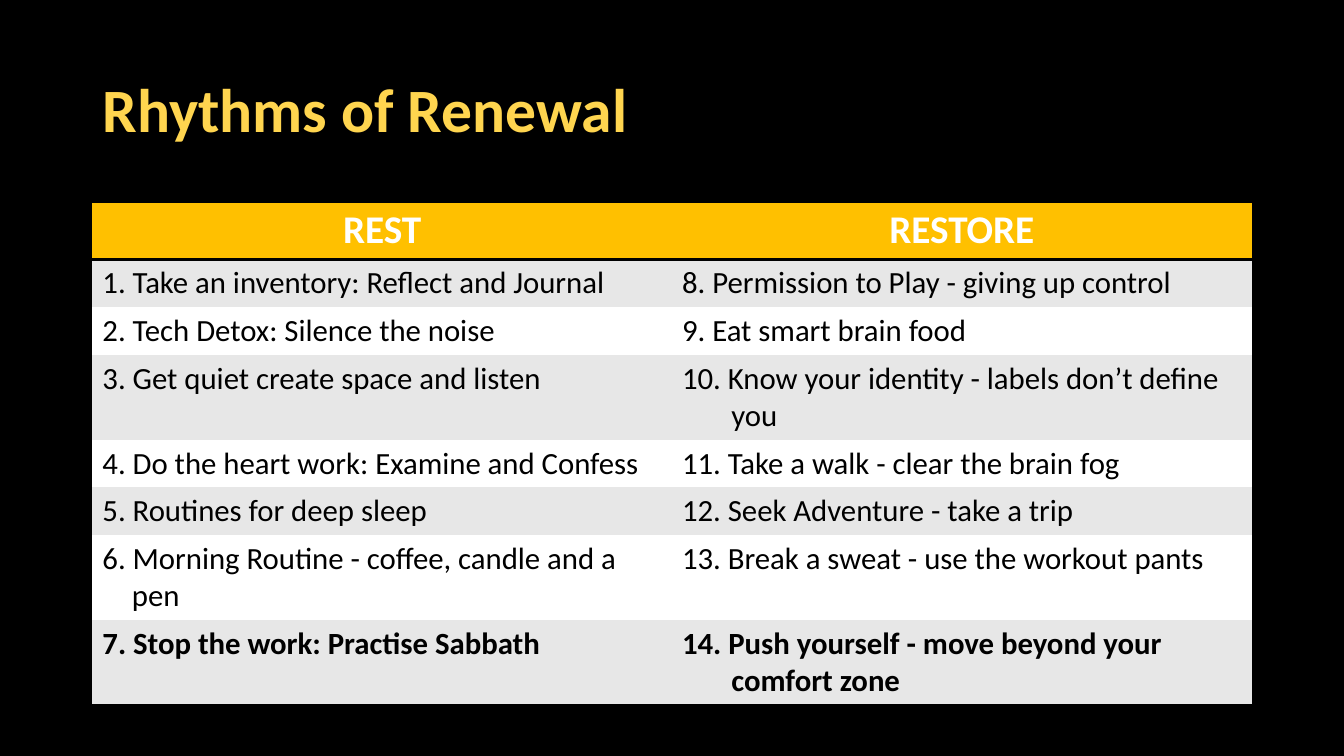
from dataclasses import dataclass
from pptx import Presentation
from pptx import util as u
from pptx.dml import color
from pptx.enum import text
from pptx.oxml import parse_xml
from pptx.oxml.ns import nsdecls


@dataclass(frozen=True)
class Theme:
    font: str = "Calibri"
    back: str = "000000"
    title: str = "FFD54F"
    head: str = "FFC000"
    light: str = "FFFFFF"
    band: str = "E7E7E7"
    ink: str = "000000"
    big: int = 44
    mid: int = 28
    base: int = 22
    rule: int = 2


THEME = Theme()
STYLE = "{2D5ABB26-0587-4C30-8999-92F81FD0307C}"
HEADS = ("REST", "RESTORE")
REST = (
    "1. Take an inventory: Reflect and Journal",
    "2. Tech Detox: Silence the noise",
    "3. Get quiet create space and listen",
    "4. Do the heart work: Examine and Confess",
    "5. Routines for deep sleep",
    "6. Morning Routine - coffee, candle and a pen",
    "7. Stop the work: Practise Sabbath",
)
RESTORE = (
    "8. Permission to Play - giving up control",
    "9. Eat smart brain food",
    "10. Know your identity - labels don’t define you",
    "11. Take a walk - clear the brain fog",
    "12. Seek Adventure - take a trip",
    "13. Break a sweat - use the workout pants",
    "14. Push yourself - move beyond your comfort zone",
)
HANG = {(3, 1): 47, (6, 0): 28, (7, 1): 47}


def px(n):
    return u.Emu(n * 9525)


def rgb(code):
    return color.RGBColor.from_string(code)


def style(para, size, code, bold):
    for run in para.runs:
        font = run.font
        font.name = THEME.font
        font.size = u.Pt(size)
        font.bold = bold
        font.color.rgb = rgb(code)


def edge(cell, side):
    cell._tc.get_or_add_tcPr().append(parse_xml(
        f'<a:{side} {nsdecls("a")} w="{u.Pt(THEME.rule)}"><a:solidFill>'
        f'<a:srgbClr val="{THEME.ink}"/></a:solidFill></a:{side}>'))


def paint(cell, code):
    cell.fill.solid()
    cell.fill.fore_color.rgb = rgb(code)


def title(slide, box):
    shape = slide.shapes.title
    shape.left, shape.top, shape.width, shape.height = map(px, box)
    frame = shape.text_frame
    frame.text = "Rhythms of Renewal"
    frame.word_wrap = True
    frame.auto_size = text.MSO_AUTO_SIZE.NONE
    frame.vertical_anchor = text.MSO_ANCHOR.MIDDLE
    para = frame.paragraphs[0]
    para.alignment = text.PP_ALIGN.LEFT
    para.line_spacing = 0.9
    style(para, THEME.big, THEME.title, True)


def table(slide, box):
    rows = [HEADS, *zip(REST, RESTORE)]
    last = len(rows) - 1
    frame = slide.shapes.add_table(len(rows), len(HEADS), *map(px, box))
    grid = frame.table
    grid._tbl.tblPr.find("{*}tableStyleId").text = STYLE
    for row in grid.rows:
        row.height = px(39)
    frame.height = px(box[3])
    for r, row in enumerate(rows):
        for c, words in enumerate(row):
            cell = grid.cell(r, c)
            cell.text = words
            para = cell.text_frame.paragraphs[0]
            if r == 0:
                para.alignment = text.PP_ALIGN.CENTER
                style(para, THEME.mid, THEME.light, True)
                edge(cell, "lnT")
            else:
                style(para, THEME.base, THEME.ink, r == last)
            if r in (0, last):
                edge(cell, "lnB")
            band = THEME.band if r % 2 else THEME.light
            paint(cell, band if r else THEME.head)
            if (r, c) in HANG:
                hang = px(HANG[r, c])
                prop = para._p.get_or_add_pPr()
                prop.set("marL", str(hang))
                prop.set("indent", str(-hang))


def main():
    deck = Presentation()
    deck.slide_width, deck.slide_height = px(1280), px(720)
    slide = deck.slides.add_slide(deck.slide_layouts[5])
    fill = slide.background.fill
    fill.solid()
    fill.fore_color.rgb = rgb(THEME.back)
    title(slide, (88, 38, 1104, 139))
    table(slide, (88, 192, 1104, 457))
    deck.save("out.pptx")


if __name__ == "__main__":
    main()
